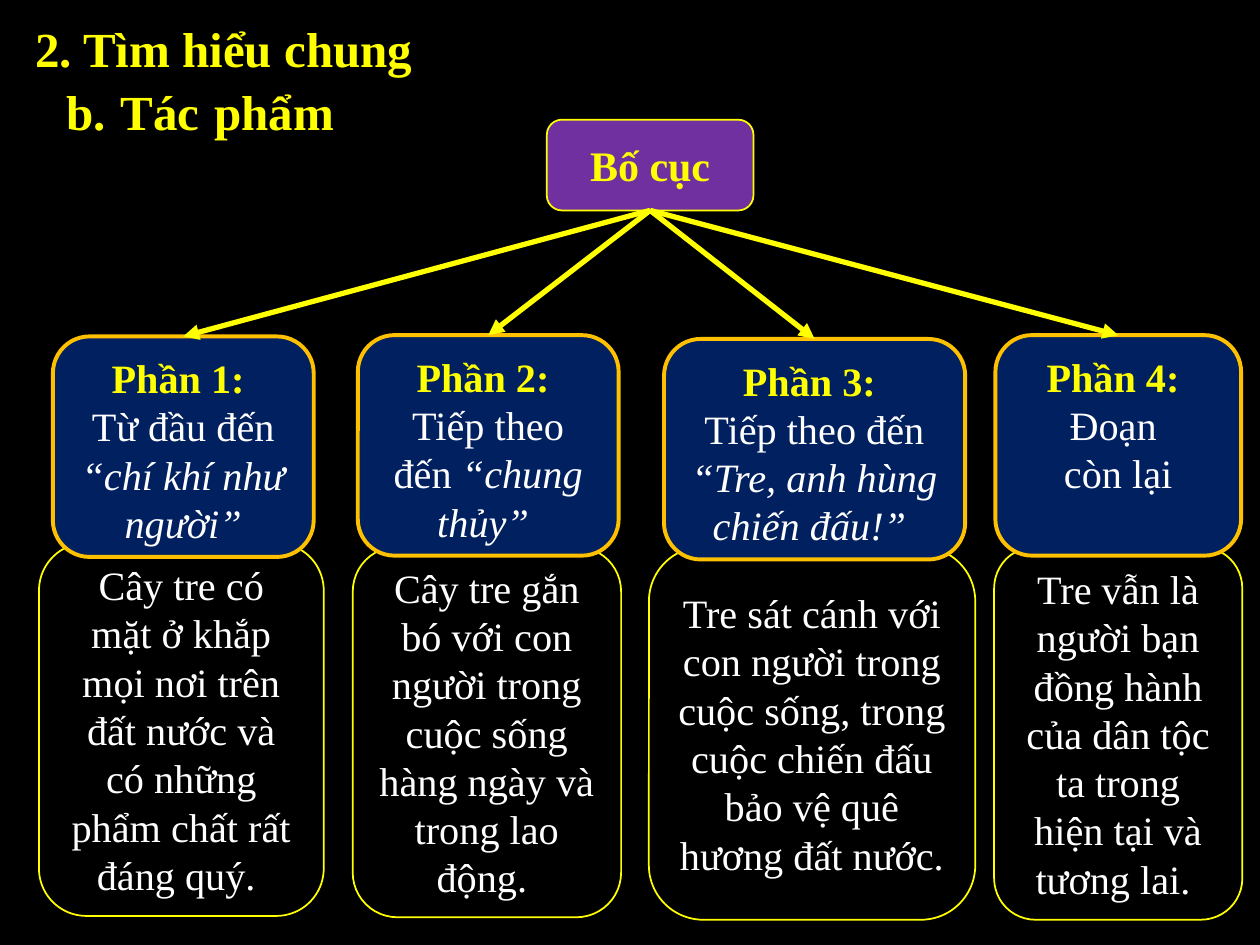
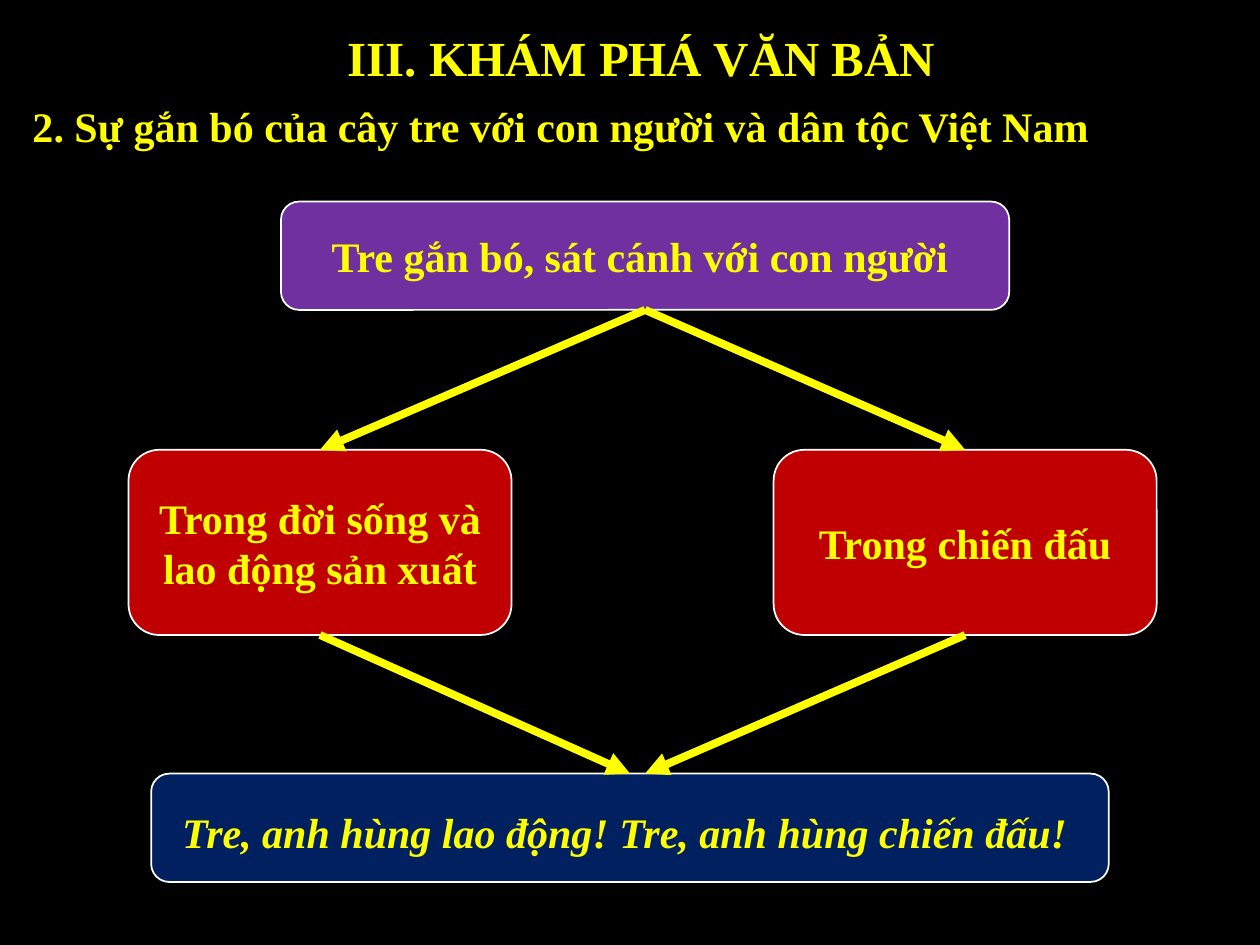
from lxml.etree import SubElement
from pptx import Presentation
from pptx.dml.color import RGBColor
from pptx.enum.shapes import MSO_CONNECTOR as CONN, MSO_SHAPE as SHAPE
from pptx.enum.text import MSO_ANCHOR as ANCHOR, MSO_AUTO_SIZE as FIT, PP_ALIGN as ALIGN
from pptx.oxml.ns import qn
from pptx.util import Inches, Pt

# Content: a paragraph is a list of (text, format) runs
LABEL = dict(color="yellow", bold=True)
BODY = dict(color="white", bold=False)
QUOTE = dict(color="white", bold=False, italic=True)

LAYOUT_HEADS = [("2. Tìm hiểu chung", (0.18, 0.1, 4.08, 0.57), 28),
                ("b. Tác phẩm ", (0.43, 0.6, 2.32, 0.57), 28)]
LAYOUT_ROOT = ("Bố cục", (4.34, 0.95, 1.64, 0.72))
PARTS = [
    dict(head=[[("Phần 1: ", LABEL)],
               [("Từ đầu đến ", BODY), ("“chí khí như người”", QUOTE)]],
         head_at=(0.42, 2.67, 2.07), note_at=(0.31, 4.31, 2.26, 2.96),
         note="Cây tre có mặt ở khắp mọi nơi trên đất nước và có những phẩm chất rất đáng quý. "),
    dict(head=[[("Phần 2: ", LABEL)],
               [("Tiếp theo đến ", BODY), ("“chung thủy” ", QUOTE)]],
         head_at=(2.84, 2.66, 2.07), note_at=(2.8, 4.34, 2.13, 2.94),
         note="Cây tre gắn bó với con người trong cuộc sống hàng ngày và trong lao động. "),
    dict(head=[[("Phần 3: ", LABEL)],
               [("Tiếp theo đến ", BODY), ("“Tre, anh hùng chiến đấu!” ", QUOTE)]],
         head_at=(5.27, 2.69, 2.39), note_at=(5.15, 4.34, 2.59, 2.96),
         note="Tre sát cánh với con người trong cuộc sống, trong cuộc chiến đấu "
              "bảo vệ quê hương đất nước. "),
    dict(head=[[("Phần 4: ", LABEL)], [("Đoạn ", BODY)], [("còn lại", BODY)]],
         head_at=(7.9, 2.66, 1.95), note_at=(7.89, 4.34, 1.97, 2.96),
         note="Tre vẫn là người bạn đồng hành của dân tộc ta trong hiện tại và tương lai. "),
]
PART_HEIGHT = 1.75

BOND_HEADS = [("III. KHÁM PHÁ VĂN BẢN", (2.66, 0.17, 4.92, 0.57), 28),
              ("2. Sự gắn bó của cây tre với con người và dân tộc Việt Nam",
               (0.16, 0.75, 8.84, 0.5), 24)]
BOND_ROOT = ("Tre gắn bó, sát cánh với con người ", (2.23, 1.6, 5.78, 0.86))
BOND_SIDES = ["Trong đời sống và lao động sản xuất", "Trong chiến đấu"]
SIDE_LEFT, SIDE_STEP, SIDE_TOP, SIDE_SIZE = 1.02, 5.12, 3.57, (3.04, 1.47)
BOND_END = ("Tre, anh hùng lao động! Tre, anh hùng chiến đấu! ", (1.2, 6.14, 7.6, 0.86))
END_SHIFTS = [0, 0.12]  # where the closing arrows land, from the box centre

# Shared style
FONT = "Times New Roman"
COLORS = dict(black="000000", white="FFFFFF", yellow="FFFF00", purple="7030A0",
              navy="002060", gold="FFC000", red="C00000")


def rgb(name):
    return RGBColor.from_string(COLORS[name])


def write(s, text, size=24, color="yellow", bold=True, italic=False,
          align=ALIGN.CENTER, anchor=ANCHOR.MIDDLE, spacing=None):
    """Fill a shape with a string or a list of paragraphs made of runs."""
    tf = s.text_frame
    tf.word_wrap, tf.vertical_anchor = True, anchor
    paragraphs = [[(text, {})]] if isinstance(text, str) else text
    for i, runs in enumerate(paragraphs):
        p = tf.add_paragraph() if i else tf.paragraphs[0]
        p.alignment = align
        if spacing:
            p.line_spacing = spacing
        for words, own in runs:
            fmt = dict(color=color, bold=bold, italic=italic) | own
            r = p.add_run()
            r.text = words
            r.font.name, r.font.size = FONT, Pt(size)
            r.font.bold, r.font.italic = fmt["bold"], fmt["italic"]
            r.font.color.rgb = rgb(fmt["color"])


def add_slide(prs, heads):
    slide = prs.slides.add_slide(prs.slide_layouts[6])
    slide.background.fill.solid()
    slide.background.fill.fore_color.rgb = rgb("black")
    for text, at, size in heads:
        s = slide.shapes.add_textbox(*map(Inches, at))
        write(s, text, size=size, align=ALIGN.JUSTIFY, anchor=ANCHOR.TOP)
        s.text_frame.auto_size = FIT.SHAPE_TO_FIT_TEXT
    return slide


def add_box(slide, text, at, fill, line, weight=1, **fmt):
    s = slide.shapes.add_shape(SHAPE.ROUNDED_RECTANGLE, *map(Inches, at))
    s.shadow.inherit = False
    s.fill.solid()
    s.fill.fore_color.rgb = rgb(fill)
    s.line.color.rgb = rgb(line)
    s.line.width = Pt(weight)
    write(s, text, **fmt)
    return s


def add_arrow(slide, start, end, weight, shift=0):
    """Arrow from the bottom centre of one box to the top edge of another."""
    c = slide.shapes.add_connector(
        CONN.STRAIGHT, start.left + start.width // 2, start.top + start.height,
        end.left + end.width // 2 + Inches(shift), end.top)
    c.line.color.rgb = rgb("yellow")
    c.line.width = Pt(weight)
    SubElement(c.line._get_or_add_ln(), qn("a:tailEnd"), type="triangle")
    SubElement(c._element.spPr, qn("a:effectLst"))


def build_layout(prs):
    slide = add_slide(prs, LAYOUT_HEADS)
    root = add_box(slide, *LAYOUT_ROOT, "purple", "yellow")
    # Notes lie behind the part boxes
    for part in PARTS:
        add_box(slide, part["note"], part["note_at"], "black", "yellow",
                size=23, color="white", bold=False)
    heads = [add_box(slide, part["head"], (*part["head_at"], PART_HEIGHT), "navy", "gold",
                     weight=2.25, size=23, anchor=ANCHOR.TOP) for part in PARTS]
    for head in heads:
        add_arrow(slide, root, head, 3)


def build_bond(prs):
    slide = add_slide(prs, BOND_HEADS)
    root = add_box(slide, *BOND_ROOT, "purple", "white")
    end = add_box(slide, *BOND_END, "navy", "white", italic=True, spacing=1.15)
    sides = [add_box(slide, text, (SIDE_LEFT + i * SIDE_STEP, SIDE_TOP, *SIDE_SIZE),
                     "red", "white") for i, text in enumerate(BOND_SIDES)]
    for side in sides:
        add_arrow(slide, root, side, 4.5)
    for side, shift in zip(sides, END_SHIFTS):
        add_arrow(slide, side, end, 4.5, shift)


def main():
    prs = Presentation()
    prs.slide_width, prs.slide_height = Inches(10), Inches(7.5)
    build_layout(prs)
    build_bond(prs)
    prs.save("out.pptx")


if __name__ == "__main__":
    main()
